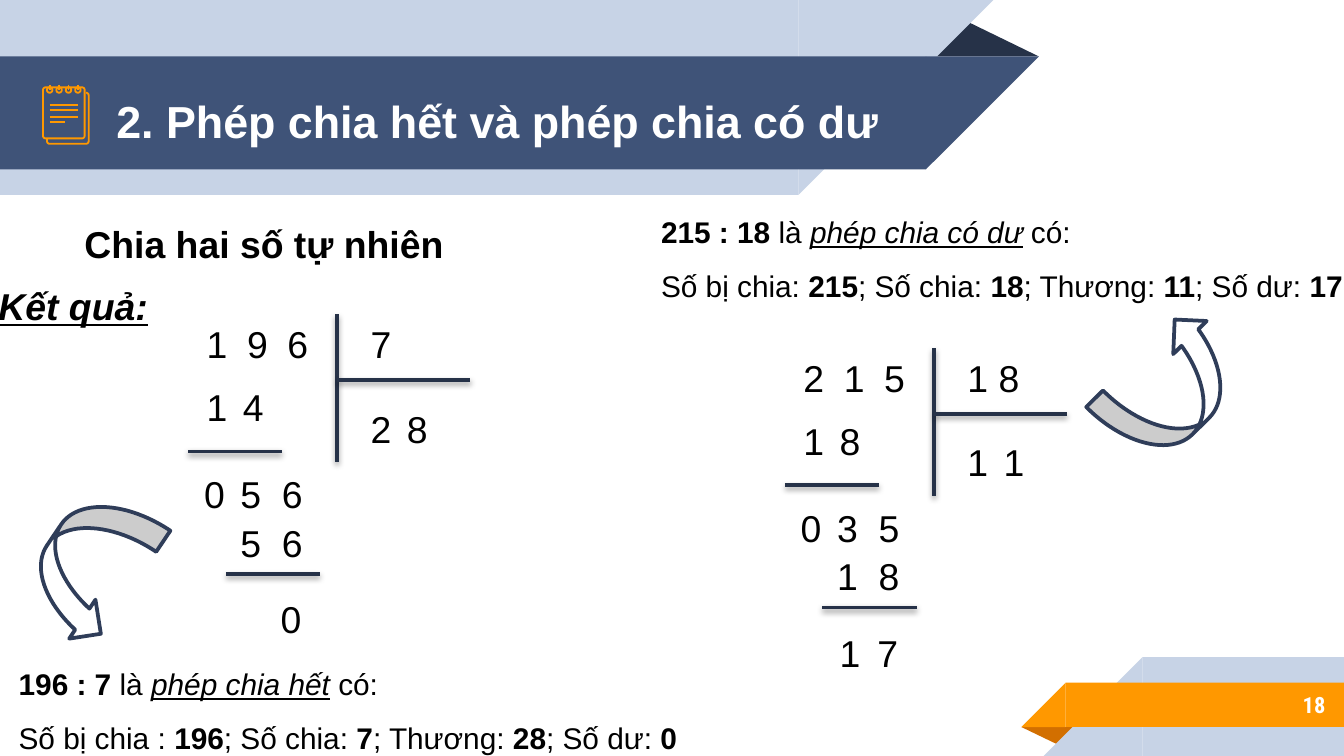
from dataclasses import dataclass
from math import cos, radians, sin

from lxml import etree
from pptx import Presentation
from pptx import util as u
from pptx.dml.color import RGBColor
from pptx.enum import shapes, text
from pptx.oxml.ns import qn


@dataclass(frozen=True)
class Theme:
    font: str = "Arial"
    number_font: str = "Roboto Condensed"
    title: int = 24
    heading: int = 20
    body: int = 16
    number: int = 12
    white: str = "FFFFFF"
    black: str = "000000"
    pale: str = "C7D3E6"
    blue: str = "3F5378"
    navy: str = "263248"
    outline: str = "2F3D59"
    orange: str = "FF9800"
    rust: str = "D26F00"


T = Theme()
M = shapes.MSO_SHAPE
A = text.PP_ALIGN
W, H = u.Inches(10), u.Inches(5.625)
COLS = 1000  # square grid: 1000 columns over the slide width


def g(n):
    return u.Emu(round(n * W / COLS))


def rgb(c):
    return RGBColor.from_string(c)


# --- Basic parts ---
def add_shape(s, kind, box, fill, rot=0, flip=False, line=None, adj=()):
    sp = s.shapes.add_shape(kind, *map(g, box))
    sp.shadow.inherit = False
    sp.rotation = rot
    if flip:
        sp.element.spPr.get_or_add_xfrm().set("flipH", "1")
    for i, a in enumerate(adj):
        sp.adjustments[i] = a
    sp.fill.solid()
    sp.fill.fore_color.rgb = rgb(fill)
    if line:
        sp.line.color.rgb = rgb(line)
        sp.line.width = u.Pt(2)
    else:
        sp.line.fill.background()


def add_line(s, x1, y1, x2, y2, color, width, shadow=False):
    cx = s.shapes.add_connector(shapes.MSO_CONNECTOR.STRAIGHT, g(x1), g(y1), g(x2), g(y2))
    cx.line.color.rgb = rgb(color)
    cx.line.width = u.Pt(width)
    effects = etree.SubElement(cx.element.spPr, qn("a:effectLst"))
    if shadow:
        sh = etree.SubElement(effects, qn("a:outerShdw"), blurRad=str(u.Pt(3.1)),
                              dist=str(u.Pt(1.6)), dir="5400000", rotWithShape="0")
        clr = etree.SubElement(sh, qn("a:srgbClr"), val=T.black)
        etree.SubElement(clr, qn("a:alpha"), val="38000")


def add_text(s, box, paragraphs, size, color=T.black, align=A.LEFT, spacing=None, font=T.font):
    """Each paragraph is a list of (words, style); style letters are b, i and u."""
    tb = s.shapes.add_textbox(*map(g, box))
    tf = tb.text_frame
    tf.word_wrap = True
    for i, runs in enumerate(paragraphs):
        p = tf.add_paragraph() if i else tf.paragraphs[0]
        p.alignment = align
        p.line_spacing = spacing
        p.font.name, p.font.size = font, u.Pt(size)
        p.font.color.rgb = rgb(color)
        for words, style in runs:
            r = p.add_run()
            r.text = words
            for letter, name in (("b", "bold"), ("i", "italic"), ("u", "underline")):
                if letter in style:
                    setattr(r.font, name, True)
    return tf


def add_outline(s, points, close):
    (x, y), *rest = [(g(px), g(py)) for px, py in points]
    fb = s.shapes.build_freeform(x, y)
    fb.add_line_segments(rest, close=close)
    sp = fb.convert_to_shape()
    sp.shadow.inherit = False
    sp.fill.background()
    sp.line.color.rgb = rgb(T.orange)
    sp.line.width = u.Pt(1)


def arc(cx, cy, r, start, end, step=15):
    return [(cx + r * cos(radians(a)), cy + r * sin(radians(a)))
            for a in range(start, end + 1, step)]


# --- Regions ---
def banner(s, x, y):
    add_shape(s, M.ISOSCELES_TRIANGLE, (x + 688, y + 14, 85, 28), T.navy, adj=[0.324])
    for top, width, height, color in ((0, 594, 145, T.pale), (42, 689, 84, T.blue)):
        add_shape(s, M.RECTANGLE, (x, y + top, width, height), color, 180, True)
        add_shape(s, M.RIGHT_TRIANGLE, (x + width, y + top, height, height), color, 180, True)


def footer(s, x, y):
    add_shape(s, M.ISOSCELES_TRIANGLE, (x, y + 52, 43, 14), T.rust, 180, adj=[0.324])
    for left, top, width, height, color in ((90, 0, 150, 73.5, T.pale), (33, 19, 207, 33, T.orange)):
        add_shape(s, M.RECTANGLE, (x + left, y + top, width, height), color, flip=True)
        add_shape(s, M.RIGHT_TRIANGLE, (x + left - height, y + top, height, height), color, flip=True)
    tf = add_text(s, (x + 73, y + 18, 163, 35), [[("18", "b")]], T.number, T.white,
                  A.RIGHT, font=T.number_font)
    tf.vertical_anchor = text.MSO_ANCHOR.MIDDLE
    tf.margin_top = tf.margin_bottom = g(10)


def notebook(s, x, y, w=31, h=38, r=2):
    # Back page, front page
    add_outline(s, [(x + 3, y + h), *arc(x + 5, y + h + 2, r, 90, 180)[::-1],
                    *arc(x + w + 1, y + h + 2, r, 0, 90)[::-1],
                    *arc(x + w + 1, y + 6, r, -90, 0)[::-1]], False)
    corners = ((w - r, h - r, 0), (r, h - r, 90), (r, r, 180), (w - r, r, 270))
    add_outline(s, [pt for cx, cy, a in corners
                    for pt in arc(x + cx, y + cy, r, a, a + 90)], True)
    # Rings and their pins
    for i in range(4):
        cx = x + 5 + 7 * i
        add_outline(s, arc(cx, y + 2, 2, 0, 345), True)
        add_line(s, cx, y - 2, cx, y + 2, T.orange, 1)
    # Written lines
    for top, width in ((13, 21), (17, 21), (22, 21), (26, 11)):
        add_line(s, x + 5, y + top, x + 5 + width, y + top, T.orange, 1)


def long_division(s, x, y, dividend, divisor, quotient, product, partial, last, remainder):
    digit_rows = [
        (dividend, (0, 30, 60), 0),
        (quotient, (122, 149), 63),
        (product, (0, 27), 47),
        (partial, (-2, 25, 56), 112),
        (last, (25, 56), 148),
        (remainder, (27, 55)[-len(remainder):], 205),
    ]
    for digits, columns, top in digit_rows:
        for digit, col in zip(digits, columns):
            add_text(s, (x + col, y + top, 43, 44), [[(digit, "")]], T.heading)
    add_text(s, (x + 122, y, 66, 44), [[(divisor, "")]], T.heading)
    for x1, y1, x2, y2 in ((107, 0, 107, 110), (107, 49, 206, 49),
                           (-4, 102, 66, 102), (24, 193, 94, 193)):
        add_line(s, x + x1, y + y1, x + x2, y + y2, T.navy, 2, True)


def conclusion(s, box, division, kind, dividend_label, values):
    labels = (dividend_label, "; Số chia: ", "; Thương: ", "; Số dư: ")
    first = [(division + " ", "b"), ("là ", ""), (kind, "iu"), (" có:", "")]
    second = [run for label, value in zip(labels, values) for run in ((label, ""), (value, "b"))]
    add_text(s, box, [first, second], T.body, align=A.JUSTIFY, spacing=1.5)


def main():
    prs = Presentation()
    prs.slide_width, prs.slide_height = W, H
    s = prs.slides.add_slide(prs.slide_layouts[6])

    banner(s, 0, 0)
    footer(s, 760, 489)
    notebook(s, 32, 65)

    # Headings
    add_text(s, (-11, 45, 762, 71), [[("2. Phép chia hết và phép chia có dư", "b")]],
             T.title, T.white, A.CENTER, 1.5)
    add_text(s, (53, 160, 363, 44), [[("Chia hai số tự nhiên", "b")]], T.heading)
    add_text(s, (-11, 206, 252, 44), [[("Kết quả:", "biu")]], T.heading, align=A.JUSTIFY)

    # Worked divisions
    long_division(s, 144, 234, "196", "7", "28", "14", "056", "56", "0")
    long_division(s, 588, 259, "215", "1 8", "11", "18", "035", "18", "17")

    # Conclusions and the arrows to them
    conclusion(s, (4, 477, 512, 91), "196 : 7", "phép chia hết",
               "Số bị chia : ", ("196", "7", "28", "0"))
    conclusion(s, (482, 141, 539, 91), "215 : 18", "phép chia có dư",
               "Số bị chia: ", ("215", "18", "11", "17"))
    add_shape(s, M.CURVED_RIGHT_ARROW, (837, 234, 70, 110), T.white, 225.3, line=T.outline)
    add_shape(s, M.CURVED_RIGHT_ARROW, (32, 366, 70, 110), T.white, 34, line=T.outline,
              adj=(0.27, 0.5, 0.25))

    prs.save("out.pptx")


if __name__ == "__main__":
    main()
